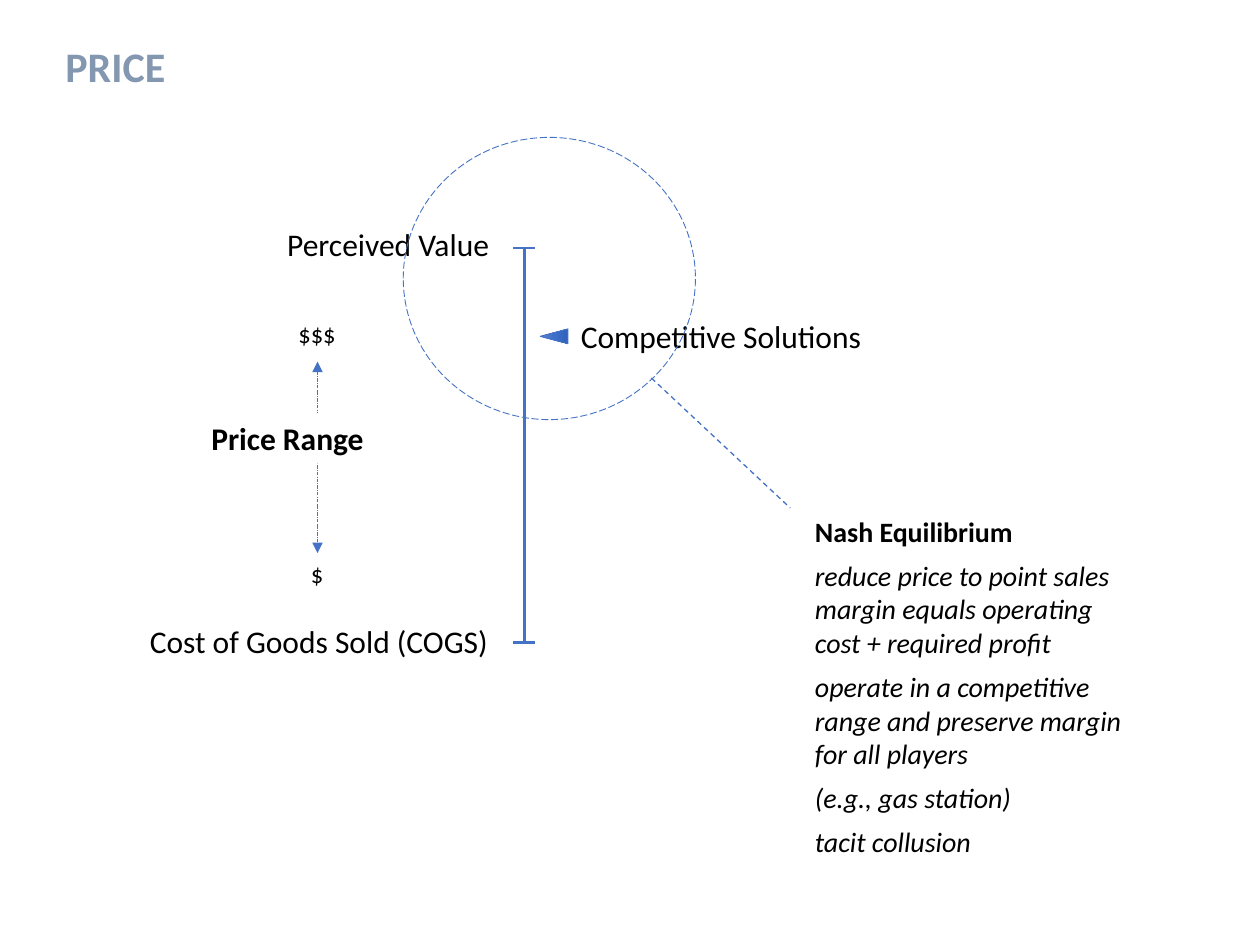
from copy import deepcopy

from pptx import Presentation
from pptx.dml.color import RGBColor
from pptx.enum.dml import MSO_LINE_DASH_STYLE as DASH
from pptx.enum.shapes import MSO_CONNECTOR as CONN, MSO_SHAPE as SHAPE
from pptx.enum.text import MSO_AUTO_SIZE as AUTO, MSO_ANCHOR as ANCHOR, PP_ALIGN as ALIGN
from pptx.oxml.ns import qn
from pptx.util import Cm, Pt

BLUE = RGBColor(0x44, 0x72, 0xC4)
SLATE = RGBColor(0x84, 0x97, 0xB0)
BLACK = RGBColor(0, 0, 0)
WHITE = RGBColor(255, 255, 255)
POINTER_STOPS = (
    (0, RGBColor(0x61, 0x83, 0xCB)),
    (0.5, RGBColor(0x3E, 0x70, 0xCA)),
    (1, RGBColor(0x30, 0x62, 0xBB)),
)
LABEL_H = 1.02


def style(p, text, size, color=BLACK, bold=False, italic=False):
    """Write one paragraph and set its font."""
    p.text = text
    p.alignment = ALIGN.LEFT
    f = p.font
    f.name, f.size, f.bold, f.italic = "Calibri", Pt(size), bold, italic
    f.color.rgb = color


def add_text(slide, box, paragraphs, wrap=False, fill=None):
    """Add a text box holding (text, size, options) paragraphs."""
    s = slide.shapes.add_textbox(*map(Cm, box))
    if fill is not None:
        s.fill.solid()
        s.fill.fore_color.rgb = fill
    tf = s.text_frame
    tf.word_wrap = wrap
    tf.auto_size = AUTO.SHAPE_TO_FIT_TEXT
    tf.vertical_anchor = ANCHOR.TOP
    for i, (text, size, options) in enumerate(paragraphs):
        p = tf.add_paragraph() if i else tf.paragraphs[0]
        style(p, text, size, **options)
        p.space_before = Pt(6 if i else 0)


def add_line(slide, start, end, width, dash=None, arrows=False):
    """Add a straight blue line, optionally with arrowheads at both ends."""
    s = slide.shapes.add_connector(CONN.STRAIGHT, *map(Cm, (*start, *end)))
    s.line.color.rgb = BLUE
    s.line.width = Pt(width)
    if dash is not None:
        s.line.dash_style = dash
    if arrows:
        ln = s.line._get_or_add_ln()
        for tag in ("a:headEnd", "a:tailEnd"):
            ln.append(ln.makeelement(qn(tag), {"type": "triangle"}))
    sp_pr = s._element.spPr
    sp_pr.append(sp_pr.makeelement(qn("a:effectLst"), {}))


def add_outlined(slide, kind, box):
    """Add a preset shape with a thin blue outline."""
    s = slide.shapes.add_shape(kind, *map(Cm, box))
    s.shadow.inherit = False
    s.line.color.rgb = BLUE
    s.line.width = Pt(0.5)
    return s


def add_pointer(slide, box):
    """Add the gradient triangle that points left at the scale."""
    s = add_outlined(slide, SHAPE.ISOSCELES_TRIANGLE, box)
    s.rotation = 270
    s.fill.gradient()
    s.fill.gradient_angle = 270
    stops = s._element.spPr.find(".//" + qn("a:gsLst"))
    stops.insert(1, deepcopy(stops[0]))
    for stop, (position, color) in zip(s.fill.gradient_stops, POINTER_STOPS):
        stop.position = position
        stop.color.rgb = color


def add_scale(slide, x, top, height):
    """Draw the value scale with its end caps, labels and pointer."""
    bottom = top + height
    add_text(slide, (x - 7.8, bottom - 0.53, 7.42, LABEL_H),
             [("Cost of Goods Sold (COGS)", 18, {})])
    add_text(slide, (x - 5.03, top - 0.58, 4.62, LABEL_H),
             [("Perceived Value", 18, {})])
    add_text(slide, (x + 0.89, top + 1.27, 6.25, LABEL_H),
             [("Competitive Solutions", 18, {})])
    add_pointer(slide, (x + 0.45, top + 1.5, 0.3, 0.56))
    add_line(slide, (x, top), (x, bottom), 1.5)
    for y in (top, bottom):
        add_line(slide, (x - 0.22, y), (x + 0.22, y), 1.5)


def add_price_range(slide, x, top, height):
    """Draw the price range arrow with its labels."""
    bottom = top + height
    add_line(slide, (x, top), (x, bottom), 0.25, DASH.LONG_DASH_DOT, arrows=True)
    add_text(slide, (x - 2.39, top + 1.04, 3.61, LABEL_H),
             [("Price Range", 18, {"bold": True})], fill=WHITE)
    for text, y, width in (("$", bottom, 0.76), ("$$$", top - 0.99, 1.27)):
        add_text(slide, (x - width / 2, y, width, 0.86), [(text, 14, {})], fill=WHITE)


def add_equilibrium(slide, left, top, width, height):
    """Draw the focus circle, its leader line and the explanation."""
    s = add_outlined(slide, SHAPE.OVAL, (left, top, 5.89, 5.69))
    s.fill.background()
    s.line.dash_style = DASH.LONG_DASH
    note_w, note_h = 7.04, 7.26
    note_x, note_y = left + width - note_w, top + height - note_h
    add_line(slide, (left + 5, top + 4.85), (note_x - 0.25, note_y), 0.75, DASH.DASH)
    points = (
        "reduce price to point sales margin equals operating cost + required profit",
        "operate in a competitive range and preserve margin for all players",
        "(e.g., gas station)",
        "tacit collusion",
    )
    add_text(slide, (note_x, note_y, note_w, note_h),
             [("Nash Equilibrium", 16, {"bold": True})]
             + [(text, 16, {"italic": True}) for text in points], wrap=True)


def main():
    """Build the price slide."""
    prs = Presentation()
    prs.slide_width, prs.slide_height = Cm(25.4), Cm(19.05)
    slide = prs.slides.add_slide(prs.slide_layouts[6])
    add_text(slide, (1.07, 0.69, 10.72, 1.27),
             [("PRICE", 24, {"color": SLATE, "bold": True})], wrap=True)
    add_scale(slide, 10.57, 5, 7.95)
    add_price_range(slide, 6.4, 7.29, 3.86)
    add_equilibrium(slide, 8.13, 2.77, 15.09, 14.73)
    prs.save("out.pptx")


if __name__ == "__main__":
    main()
